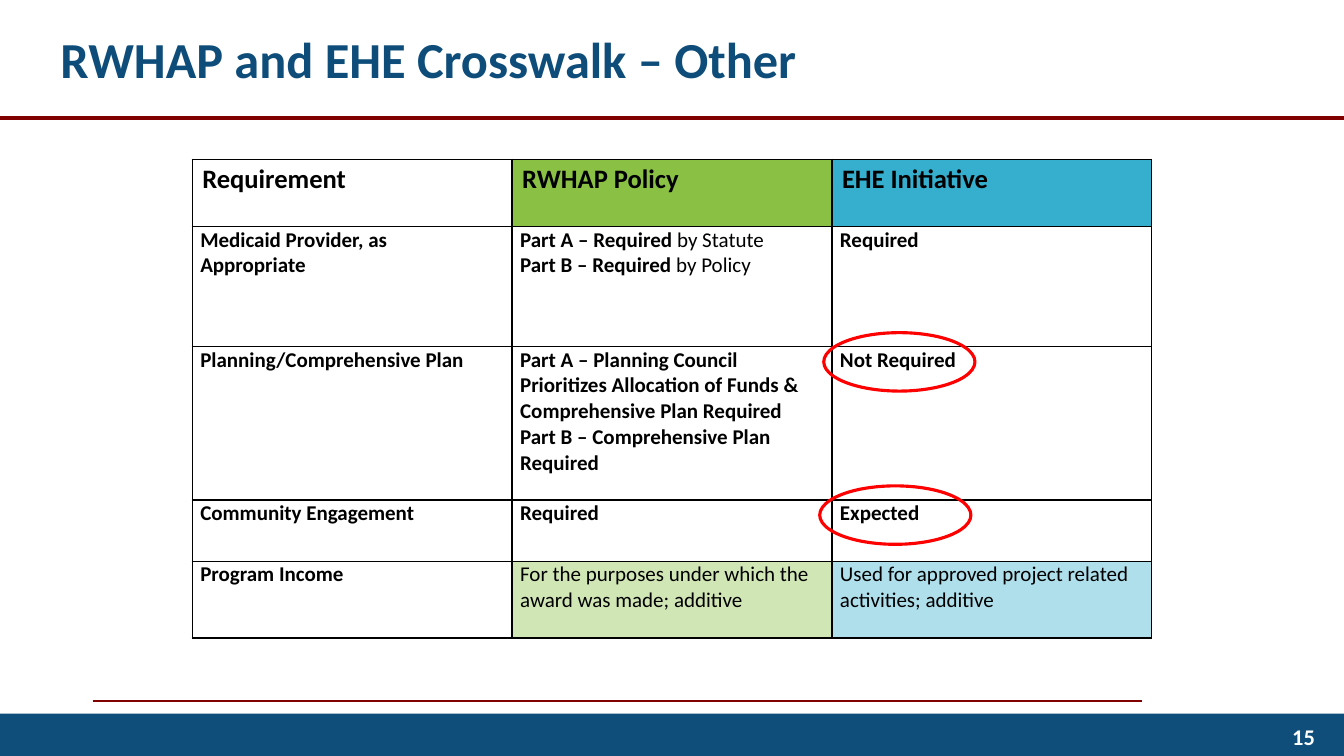
import dataclasses

import lxml.etree
import pptx
import pptx.dml.color
import pptx.enum.shapes
import pptx.enum.text
import pptx.oxml.ns
import pptx.util

WIDTH, HEIGHT = 13.33, 7.5
ANCHOR = pptx.enum.text.MSO_ANCHOR
ALIGN = pptx.enum.text.PP_ALIGN
SHAPE = pptx.enum.shapes.MSO_SHAPE


@dataclasses.dataclass(frozen=True)
class Theme:
    font: str = "Calibri"
    title: str = "0E4D7A"
    footer: str = "0F4D7B"
    rule: str = "800000"
    ring: str = "FF0000"
    ink: str = "000000"
    paper: str = "FFFFFF"
    green: str = "8AC145"
    blue: str = "36AECE"
    pale_green: str = "D1E6B5"
    pale_blue: str = "AEDFEB"
    title_size: int = 36
    header_size: int = 19
    body_size: int = 15
    number_size: int = 16


THEME = Theme()

ROW_SHARES = [8.93, 15.87, 20.27, 8.13, 10.13]
ROWS = [
    [[[("Requirement", True)]], [[("RWHAP Policy", True)]], [[("EHE Initiative", True)]]],
    [
        [[("Medicaid Provider, as Appropriate", True)]],
        [
            [("Part A – Required ", True), ("by Statute", False)],
            [("Part B – Required ", True), ("by Policy", False)],
        ],
        [[("Required", True)]],
    ],
    [
        [[("Planning/Comprehensive Plan", True)]],
        [[("Part A – Planning Council Prioritizes Allocation of Funds & "
           "Comprehensive Plan Required Part B – Comprehensive Plan Required", True)]],
        [[("Not Required", True)]],
    ],
    [[[("Community Engagement", True)]], [[("Required", True)]], [[("Expected", True)]]],
    [
        [[("Program Income", True)]],
        [[("For the purposes under which the award was made; additive", False)]],
        [[("Used for approved project related activities; additive", False)]],
    ],
]
CELL_FILLS = {
    (0, 1): THEME.green,
    (0, 2): THEME.blue,
    (4, 1): THEME.pale_green,
    (4, 2): THEME.pale_blue,
}


def rgb(value):
    return pptx.dml.color.RGBColor.from_string(value)


def across(percent):
    return pptx.util.Inches(WIDTH * percent / 100)


def down(percent):
    return pptx.util.Inches(HEIGHT * percent / 100)


def place(left, top, width, height):
    return across(left), down(top), across(width), down(height)


def apply(target, values):
    for name, value in values.items():
        setattr(target, name, value)


def add_run(p, text, size, color, bold=True):
    r = p.add_run()
    r.text = text
    apply(r.font, {"name": THEME.font, "size": pptx.util.Pt(size), "bold": bold})
    r.font.color.rgb = rgb(color)


def add_label(s, box, text, size, color, frame, align=ALIGN.LEFT):
    tf = s.shapes.add_textbox(*place(*box)).text_frame
    apply(tf, {"word_wrap": True, **frame})
    p = tf.paragraphs[0]
    p.alignment = align
    add_run(p, text, size, color)


def add_rule(s, left, right, top, width):
    line = s.shapes.add_connector(
        pptx.enum.shapes.MSO_CONNECTOR.STRAIGHT,
        across(left), down(top), across(right), down(top),
    )
    line.line.color.rgb = rgb(THEME.rule)
    line.line.width = pptx.util.Pt(width)
    lxml.etree.SubElement(line._element.spPr, pptx.oxml.ns.qn("a:effectLst"))


def add_footer(s, box):
    sp = s.shapes.add_shape(SHAPE.RECTANGLE, *place(*box))
    sp.shadow.inherit = False
    sp.fill.solid()
    sp.fill.fore_color.rgb = rgb(THEME.footer)
    sp.line.fill.background()


def add_ring(s, left, top):
    sp = s.shapes.add_shape(SHAPE.OVAL, *place(left, top, 11.25, 7.73))
    sp.shadow.inherit = False
    sp.fill.background()
    sp.line.color.rgb = rgb(THEME.ring)
    sp.line.width = pptx.util.Pt(2.25)


def add_borders(cell):
    qn = pptx.oxml.ns.qn
    tc_pr = cell._tc.get_or_add_tcPr()
    for index, side in enumerate(("a:lnL", "a:lnR", "a:lnT", "a:lnB")):
        ln = lxml.etree.Element(qn(side), w=str(pptx.util.Pt(1)))
        fill = lxml.etree.SubElement(ln, qn("a:solidFill"))
        lxml.etree.SubElement(fill, qn("a:srgbClr"), val=THEME.ink)
        tc_pr.insert(index, ln)


def fill_cell(cell, paragraphs, header, fill):
    inch = pptx.util.Inches
    apply(cell, {
        "margin_left": inch(0.1 if header else 0.08),
        "margin_right": inch(0.2),
        "margin_top": inch(0.04 if header else 0),
        "margin_bottom": 0,
        "vertical_anchor": ANCHOR.TOP,
    })
    if fill:
        cell.fill.solid()
        cell.fill.fore_color.rgb = rgb(fill)
    else:
        cell.fill.background()
    size = THEME.header_size if header else THEME.body_size
    tf = cell.text_frame
    for index, runs in enumerate(paragraphs):
        p = tf.add_paragraph() if index else tf.paragraphs[0]
        p.line_spacing = 1.0 if header else 1.01
        for text, bold in runs:
            add_run(p, text, size, THEME.ink, bold)
    add_borders(cell)


def add_crosswalk(s, box):
    table = s.shapes.add_table(len(ROWS), len(ROWS[0]), *place(*box)).table
    apply(table, {"first_row": False, "horz_banding": False})
    for column in table.columns:
        column.width = across(box[2] / len(ROWS[0]))
    for i, row in enumerate(ROWS):
        table.rows[i].height = down(ROW_SHARES[i])
        for j, paragraphs in enumerate(row):
            fill_cell(table.cell(i, j), paragraphs, i == 0, CELL_FILLS.get((i, j)))


def main():
    prs = pptx.Presentation()
    prs.slide_width, prs.slide_height = across(100), down(100)
    s = prs.slides.add_slide(prs.slide_layouts[6])
    add_rule(s, 6.9, 85, 92.67, 1.5)
    add_footer(s, (0, 94.4, 100, 5.6))
    add_rule(s, 0, 100, 15.6, 3)
    add_label(
        s, (3.75, 3.47, 86.27, 15.6), "RWHAP and EHE Crosswalk – Other",
        THEME.title_size, THEME.title,
        {"vertical_anchor": ANCHOR.TOP, "margin_top": pptx.util.Inches(0.02)},
    )
    add_label(
        s, (76.07, 94.67, 22.5, 5.6), "15", THEME.number_size, THEME.paper,
        {"vertical_anchor": ANCHOR.MIDDLE}, ALIGN.RIGHT,
    )
    add_crosswalk(s, (14.3, 21.07, 71.4, sum(ROW_SHARES)))
    for left, top in ((61.29, 44), (60.99, 64.27)):
        add_ring(s, left, top)
    prs.save("out.pptx")


if __name__ == "__main__":
    main()
